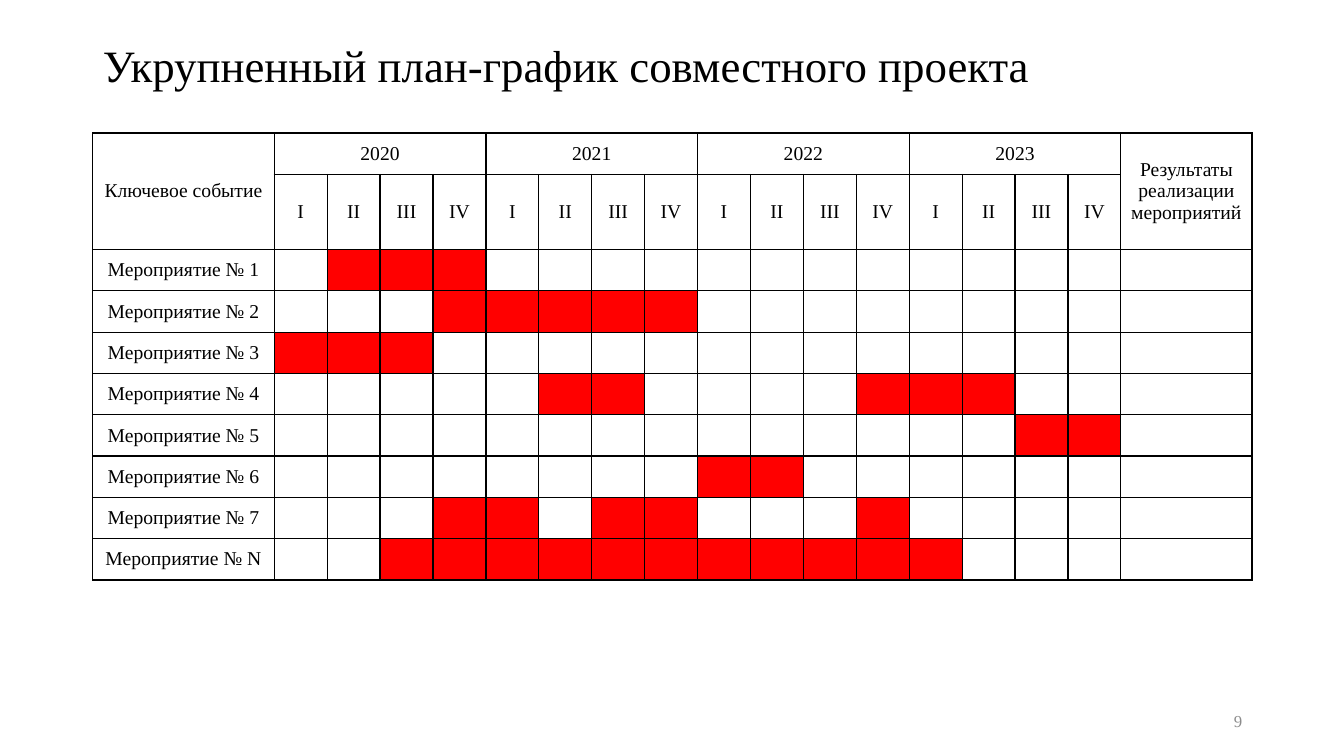
from dataclasses import dataclass

from lxml.etree import SubElement
from pptx import Presentation
from pptx.dml.color import RGBColor
from pptx.enum.text import MSO_ANCHOR as Anchor, MSO_AUTO_SIZE as AutoSize, PP_ALIGN as Align
from pptx.oxml.ns import qn
from pptx.table import Table, _Cell as Cell
from pptx.text.text import TextFrame
from pptx.util import Inches, Pt

FONT = "Times New Roman"
BLACK, GREY, RED = "000000", "8C8C8C", "FF0000"
YEARS = ("2020", "2021", "2022", "2023")
QUARTERS = ("I", "II", "III", "IV")
EVENT_WIDTH, YEAR_WIDTH, RESULT_WIDTH = 1.8, 2.1, 1.3
ROW_HEIGHT = 0.41
HEADER_ROWS = 2
LEFT, WIDTH = 0.92, 11.5


@dataclass(frozen=True)
class Activity:
    label: str
    periods: tuple[tuple[int, int], ...]

    def is_active(self, quarter: int) -> bool:
        return any(first <= quarter <= last for first, last in self.periods)


ACTIVITIES = (
    Activity("1", ((2, 4),)),
    Activity("2", ((4, 8),)),
    Activity("3", ((1, 3),)),
    Activity("4", ((6, 7), (12, 14))),
    Activity("5", ((15, 16),)),
    Activity("6", ((9, 10),)),
    Activity("7", ((4, 5), (7, 8), (12, 12))),
    Activity("N", ((3, 13),)),
)


def color(code: str) -> RGBColor:
    return RGBColor.from_string(code)


def write(frame: TextFrame, text: str, *, size: float = 14, ink: str = BLACK,
          align: Align = Align.CENTER, spacing: float = 1.0) -> None:
    frame.word_wrap = True
    paragraph = frame.paragraphs[0]
    paragraph.alignment = align
    paragraph.line_spacing = spacing
    run = paragraph.add_run()
    run.text = text
    run.font.name = FONT
    run.font.size = Pt(size)
    run.font.color.rgb = color(ink)


def outline(cell: Cell) -> None:
    properties = cell._tc.get_or_add_tcPr()
    for position, side in enumerate(("lnL", "lnR", "lnT", "lnB")):
        border = SubElement(properties, qn(f"a:{side}"), w=str(Pt(1)))
        ink = SubElement(border, qn("a:solidFill"))
        SubElement(ink, qn("a:srgbClr"), val=BLACK)
        properties.insert(position, border)


def fill_header(schedule: Table) -> None:
    result_column = len(schedule.columns) - 1
    for column, heading in ((0, "Ключевое событие"),
                            (result_column, "Результаты реализации мероприятий")):
        schedule.cell(0, column).merge(schedule.cell(1, column))
        write(schedule.cell(0, column).text_frame, heading)
    for index, year in enumerate(YEARS):
        first = 1 + index * len(QUARTERS)
        schedule.cell(0, first).merge(schedule.cell(0, first + len(QUARTERS) - 1))
        write(schedule.cell(0, first).text_frame, year)
        for column, quarter in enumerate(QUARTERS, first):
            write(schedule.cell(1, column).text_frame, quarter)


def fill_activities(schedule: Table) -> None:
    for row, activity in enumerate(ACTIVITIES, HEADER_ROWS):
        write(schedule.cell(row, 0).text_frame, f"Мероприятие № {activity.label}")
        for quarter in range(1, len(YEARS) * len(QUARTERS) + 1):
            if activity.is_active(quarter):
                period_fill = schedule.cell(row, quarter).fill
                period_fill.solid()
                period_fill.fore_color.rgb = color(RED)


def main() -> None:
    deck = Presentation()
    deck.slide_width, deck.slide_height = Inches(13.33), Inches(7.5)
    slide = deck.slides.add_slide(deck.slide_layouts[5])

    title = slide.shapes.title
    title.left, title.top = Inches(LEFT), Inches(0.4)
    title.width, title.height = Inches(WIDTH), Inches(0.55)
    title.text_frame.auto_size = AutoSize.NONE
    title.text_frame.vertical_anchor = Anchor.MIDDLE
    write(title.text_frame, "Укрупненный план-график совместного проекта",
          size=32, align=Align.LEFT, spacing=0.9)

    quarter_count = len(YEARS) * len(QUARTERS)
    row_count = HEADER_ROWS + len(ACTIVITIES)
    schedule = slide.shapes.add_table(
        row_count, quarter_count + 2, Inches(LEFT), Inches(1.32),
        Inches(WIDTH), Inches(ROW_HEIGHT * row_count)).table
    schedule.first_row = schedule.horz_banding = False
    quarter_width = YEAR_WIDTH / len(QUARTERS)
    widths = [EVENT_WIDTH] + [quarter_width] * quarter_count + [RESULT_WIDTH]
    for column, width in zip(schedule.columns, widths):
        column.width = Inches(width)
    for row in schedule.rows:
        row.height = Inches(ROW_HEIGHT)
    for cell in schedule.iter_cells():
        cell.vertical_anchor = Anchor.MIDDLE
        cell.fill.background()
        outline(cell)
    fill_header(schedule)
    fill_activities(schedule)

    page_number = slide.shapes.add_textbox(
        Inches(9.42), Inches(6.95), Inches(3), Inches(0.4)).text_frame
    page_number.vertical_anchor = Anchor.MIDDLE
    write(page_number, "9", size=12, ink=GREY, align=Align.RIGHT)

    deck.save("out.pptx")


if __name__ == "__main__":
    main()
